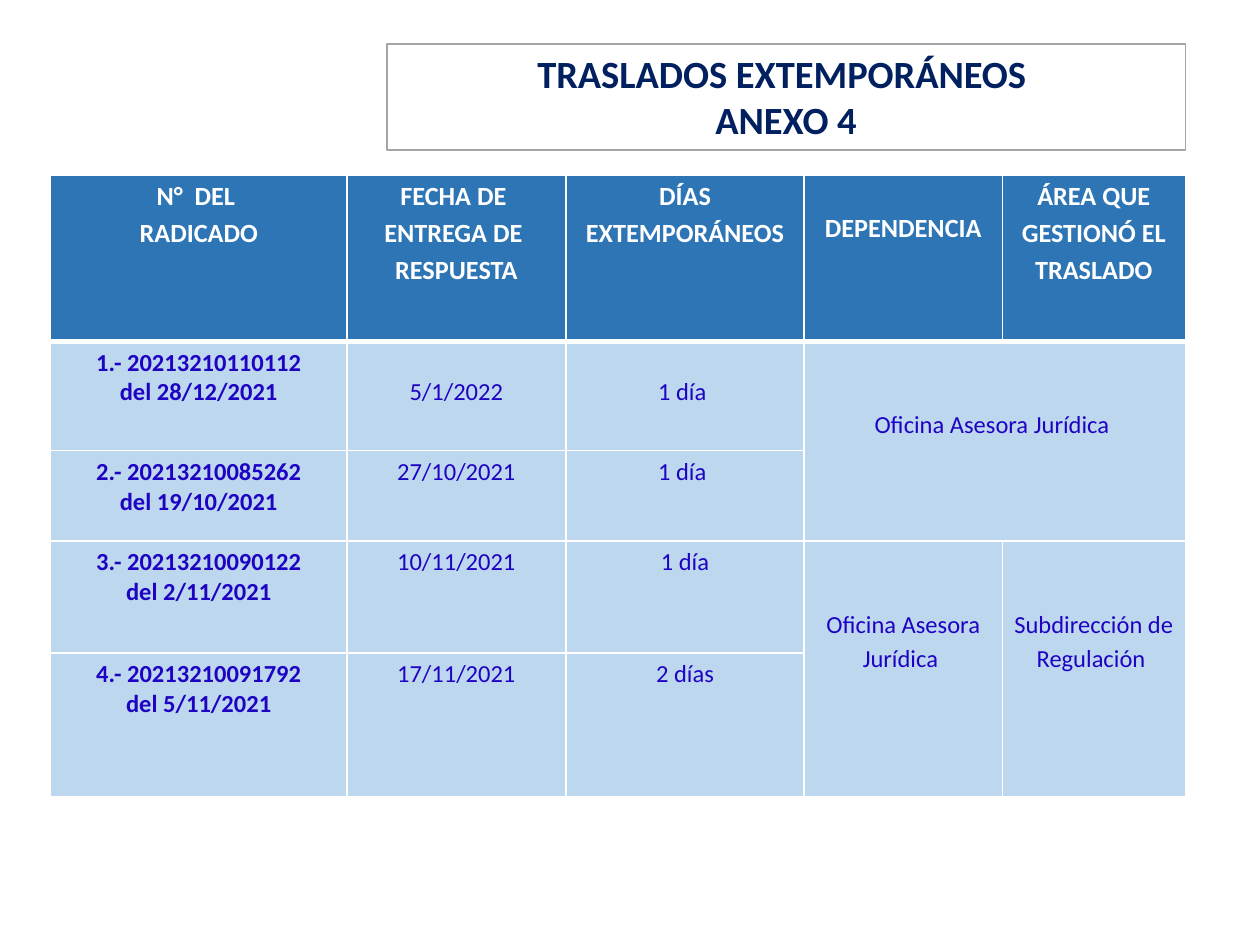
import pptx
import pptx.util
import pptx.dml.color
import pptx.enum.shapes
import pptx.enum.text
import lxml.etree

Pt = pptx.util.Pt
A_NS = "http://schemas.openxmlformats.org/drawingml/2006/main"

THEME = {
    "font": "Calibri",
    "white": "FFFFFF", "navy": "002060", "grey": "A5A5A5",
    "header_fill": "2E75B6", "body_fill": "BDD7EE", "ink": "1E03C3",
    "title_size": 22, "header_size": 15, "body_size": 14,
}

# Content
TITLE = ["TRASLADOS EXTEMPORÁNEOS ", "ANEXO 4"]
HEADERS = [
    ["N°  DEL ", "RADICADO"],
    ["FECHA DE ", "ENTREGA DE ", "RESPUESTA"],
    ["DÍAS EXTEMPORÁNEOS"],
    ["DEPENDENCIA"],
    ["ÁREA QUE GESTIONÓ EL TRASLADO"],
]
RECORDS = [
    ("1.- 20213210110112", "del 28/12/2021", "5/1/2022", "1 día "),
    ("2.- 20213210085262", "del 19/10/2021", "27/10/2021", "1 día "),
    ("3.- 20213210090122", "del 2/11/2021", "10/11/2021", "1 día"),
    ("4.- 20213210091792", "del 5/11/2021", "17/11/2021", "2 días"),
]
# Merged office cells: first row, first column, last row, last column, text
OFFICES = [
    (1, 3, 2, 4, "Oficina Asesora Jurídica "),
    (3, 3, 4, 3, "Oficina Asesora Jurídica "),
    (3, 4, 4, 4, "Subdirección de Regulación "),
]

# Layout in points
TITLE_BOX = (221, 25, 456.5, 60.8)
TABLE_LEFT, TABLE_TOP = 29, 100.4
COLUMN_WIDTHS = [169.2, 125.2, 136.2, 113.2, 104.6]
ROW_HEIGHTS = [94.7, 62.4, 51.8, 64, 82.1]
TIGHT, NORMAL = (5, 0), (7.2, 3.6)  # side and top margins of a cell
HEADER_DROP, RECORD_DROP, OFFICE_DROP = 18.3, 17.1, 37


def color(name):
    return pptx.dml.color.RGBColor.from_string(THEME[name])


def write(frame, lines, size, ink, bold, spacing=None):
    for index, line in enumerate(lines):
        para = frame.paragraphs[0] if index == 0 else frame.add_paragraph()
        para.alignment = pptx.enum.text.PP_ALIGN.CENTER
        if spacing:
            para.line_spacing = spacing
        span = para.add_run()
        span.text = line
        span.font.name = THEME["font"]
        span.font.size = Pt(THEME[size])
        span.font.bold = bold
        span.font.color.rgb = color(ink)


def style_cell(cell, fill, bottom_width):
    properties = cell._tc.get_or_add_tcPr()
    for side, width in (("L", 1), ("R", 1), ("T", 1), ("B", bottom_width)):
        line = lxml.etree.SubElement(properties, f"{{{A_NS}}}ln{side}", w=str(Pt(width)))
        solid = lxml.etree.SubElement(line, f"{{{A_NS}}}solidFill")
        lxml.etree.SubElement(solid, f"{{{A_NS}}}srgbClr", val=THEME["white"])
    cell.fill.solid()
    cell.fill.fore_color.rgb = color(fill)


def set_margins(cell, margins, drop=0):
    side, top = margins
    cell.margin_left = cell.margin_right = Pt(side)
    cell.margin_top, cell.margin_bottom = Pt(top + drop), Pt(top)


def add_title(page):
    box = page.shapes.add_shape(
        pptx.enum.shapes.MSO_SHAPE.RECTANGLE, *[Pt(length) for length in TITLE_BOX])
    box.shadow.inherit = False
    box.fill.solid()
    box.fill.fore_color.rgb = color("white")
    box.line.color.rgb = color("grey")
    box.line.width = Pt(1)
    frame = box.text_frame
    frame.word_wrap = True
    frame.auto_size = pptx.enum.text.MSO_AUTO_SIZE.SHAPE_TO_FIT_TEXT
    frame.vertical_anchor = pptx.enum.text.MSO_ANCHOR.TOP
    write(frame, TITLE, "title_size", "navy", True)


def add_table(page):
    table = page.shapes.add_table(
        len(ROW_HEIGHTS), len(COLUMN_WIDTHS), Pt(TABLE_LEFT), Pt(TABLE_TOP),
        Pt(sum(COLUMN_WIDTHS)), Pt(sum(ROW_HEIGHTS))).table
    table.first_row = table.horz_banding = False
    for column, width in zip(table.columns, COLUMN_WIDTHS):
        column.width = Pt(width)
    for row_number, (row, height) in enumerate(zip(table.rows, ROW_HEIGHTS)):
        row.height = Pt(height)
        for cell in row.cells:
            if row_number == 0:
                style_cell(cell, "header_fill", 3)
            else:
                style_cell(cell, "body_fill", 1)

    # Header row; the dependency heading sits one line lower
    for column, lines in enumerate(HEADERS):
        cell = table.cell(0, column)
        set_margins(cell, TIGHT, HEADER_DROP if column == 3 else 0)
        write(cell.text_frame, lines, "header_size", "white", True, 1.15)

    # Records; date and days of the first one sit one line lower
    for row, (number, filed, answered, days) in enumerate(RECORDS, 1):
        for column, lines in enumerate([[number, filed], [answered], [days]]):
            cell = table.cell(row, column)
            set_margins(cell, NORMAL, RECORD_DROP if row == 1 and column > 0 else 0)
            write(cell.text_frame, lines, "body_size", "ink", column == 0)

    # Offices
    for top, left, bottom, right, text in OFFICES:
        cell = table.cell(top, left)
        cell.merge(table.cell(bottom, right))
        set_margins(cell, TIGHT, OFFICE_DROP)
        write(cell.text_frame, [text], "body_size", "ink", False, 1.15)


def main():
    deck = pptx.Presentation()
    deck.slide_width, deck.slide_height = Pt(720), Pt(540)
    page = deck.slides.add_slide(deck.slide_layouts[6])
    add_title(page)
    add_table(page)
    deck.save("out.pptx")


if __name__ == "__main__":
    main()
